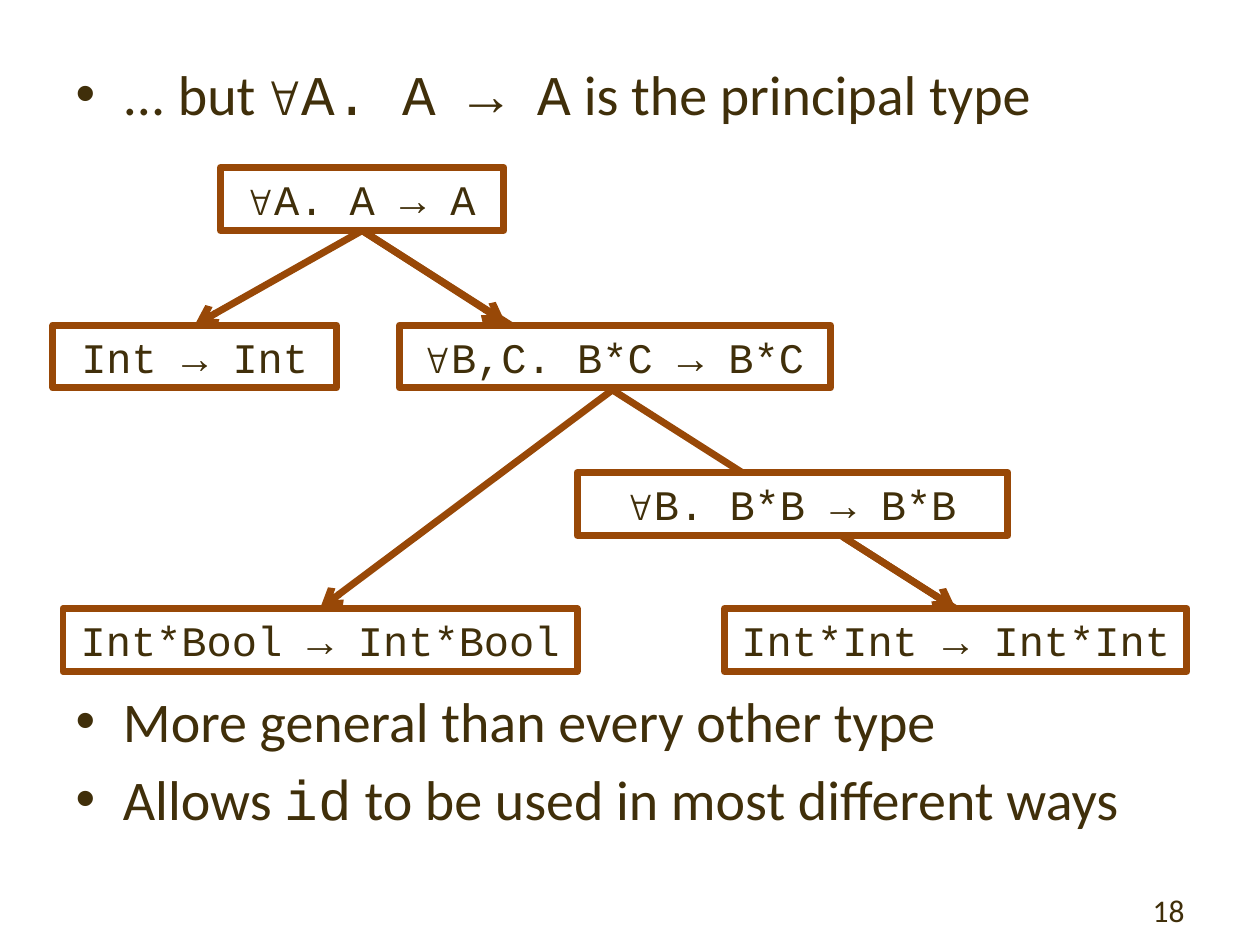
from lxml.etree import SubElement
from pptx import Presentation
from pptx.dml.color import RGBColor
from pptx.enum.shapes import MSO_CONNECTOR, MSO_SHAPE
from pptx.enum.text import MSO_ANCHOR, MSO_AUTO_SIZE, PP_ALIGN
from pptx.oxml.ns import qn
from pptx.util import Inches, Pt

COLORS = {"text": "402F0A", "line": "984807", "fill": "FFFFFF"}
TEXT_FONT, CODE_FONT = "Calibri", "Courier New"
TOP, BOTTOM = 0, 2
BOX_HEIGHT = 0.5

# Bullets: space before in points, then (text, font) runs
BULLETS = [
    (6.4, [("... but ", TEXT_FONT), ("∀A. A → A", CODE_FONT),
           (" is the principal type", TEXT_FONT)]),
    (320, [("More general than every other type", TEXT_FONT)]),
    (6.4, [("Allows ", TEXT_FONT), ("id", CODE_FONT),
           (" to be used in most different ways", TEXT_FONT)]),
]

# Type boxes: label, left, top, width, filled
TYPE_BOXES = {
    "pair": ("∀B,C. B*C → B*C", 3.17, 2.58, 3.42, True),
    "same_pair": ("∀B. B*B → B*B", 4.58, 3.75, 3.42, True),
    "int_pair": ("Int*Int → Int*Int", 5.75, 4.83, 3.67, True),
    "int_bool": ("Int*Bool → Int*Bool", 0.5, 4.83, 4.08, False),
    "principal": ("∀A. A → A", 1.75, 1.33, 2.25, False),
    "int": ("Int → Int", 0.42, 2.58, 2.25, False),
}

# Arrows: each end is a box name (joined at its middle) or a point
ARROWS = [
    ("pair", "int_bool"),
    ((6.69, 4.26), "int_pair"),
    ("principal", "int"),
    ("principal", (4.01, 2.56)),
]


def color(name):
    return RGBColor.from_string(COLORS[name])


def apply_format(target, values):
    for name, value in values.items():
        setattr(target, name, value)


def add_run(paragraph, text, font_name, size):
    run = paragraph.add_run()
    run.text = text
    apply_format(run.font, {"name": font_name, "size": Pt(size)})
    run.font.color.rgb = color("text")


def place(shape, left, top, width, height):
    apply_format(shape, {"left": Inches(left), "top": Inches(top),
                         "width": Inches(width), "height": Inches(height)})


def fill_body(slide):
    body = slide.placeholders[1]
    place(body, 0.5, 0.42, 9, 6.6)
    frame = body.text_frame
    apply_format(frame, {"auto_size": MSO_AUTO_SIZE.NONE, "word_wrap": True,
                         "vertical_anchor": MSO_ANCHOR.TOP})
    for index, (space, runs) in enumerate(BULLETS):
        paragraph = frame.add_paragraph() if index else frame.paragraphs[0]
        paragraph.space_before = Pt(space)
        for text, font_name in runs:
            add_run(paragraph, text, font_name, 32)


def add_slide_number(slide, number):
    box = slide.shapes.add_textbox(
        Inches(7.17), Inches(7.02), Inches(2.33), Inches(0.4))
    box.text_frame.word_wrap = True
    paragraph = box.text_frame.paragraphs[0]
    paragraph.alignment = PP_ALIGN.RIGHT
    add_run(paragraph, number, TEXT_FONT, 18)


def style_line(shape):
    shape.line.color.rgb = color("line")
    shape.line.width = Pt(4)


def add_type_box(slide, label, left, top, width, filled):
    box = slide.shapes.add_shape(
        MSO_SHAPE.RECTANGLE, Inches(left), Inches(top),
        Inches(width), Inches(BOX_HEIGHT))
    box.shadow.inherit = False
    if filled:
        box.fill.solid()
        box.fill.fore_color.rgb = color("fill")
    else:
        box.fill.background()
    style_line(box)
    frame = box.text_frame
    apply_format(frame, {"word_wrap": True, "vertical_anchor": MSO_ANCHOR.TOP,
                         "auto_size": MSO_AUTO_SIZE.SHAPE_TO_FIT_TEXT})
    paragraph = frame.paragraphs[0]
    apply_format(paragraph, {"alignment": PP_ALIGN.CENTER,
                             "space_before": Pt(4.8)})
    add_run(paragraph, label, CODE_FONT, 24)
    return box


def add_line(slide, start=(0, 0), end=(0, 0), arrow=False):
    line = slide.shapes.add_connector(
        MSO_CONNECTOR.STRAIGHT, *map(Inches, start + end))
    style_line(line)
    if arrow:
        SubElement(line.line._get_or_add_ln(), qn("a:tailEnd"), type="arrow")
    SubElement(line._element.spPr, qn("a:effectLst"))
    return line


def join(line, boxes, start, end):
    """Join the ends that name a box: from its bottom, to its top."""
    if start in boxes:
        line.begin_connect(boxes[start], BOTTOM)
    if end in boxes:
        line.end_connect(boxes[end], TOP)


def add_arrow(slide, boxes, start, end):
    points = [(0, 0) if stop in boxes else stop for stop in (start, end)]
    line = add_line(slide, *points, arrow=True)
    join(line, boxes, start, end)


def main():
    presentation = Presentation()
    presentation.slide_width = Inches(10)
    presentation.slide_height = Inches(7.5)
    slide = presentation.slides.add_slide(presentation.slide_layouts[1])
    title = slide.shapes.title._element
    title.getparent().remove(title)

    fill_body(slide)
    # This line runs behind the boxes, so it is drawn before them
    long_line = add_line(slide)
    add_slide_number(slide, "18")
    boxes = {name: add_type_box(slide, *values)
             for name, values in TYPE_BOXES.items()}
    join(long_line, boxes, "principal", "int_pair")
    for start, end in ARROWS:
        add_arrow(slide, boxes, start, end)
    presentation.save("out.pptx")


if __name__ == "__main__":
    main()
